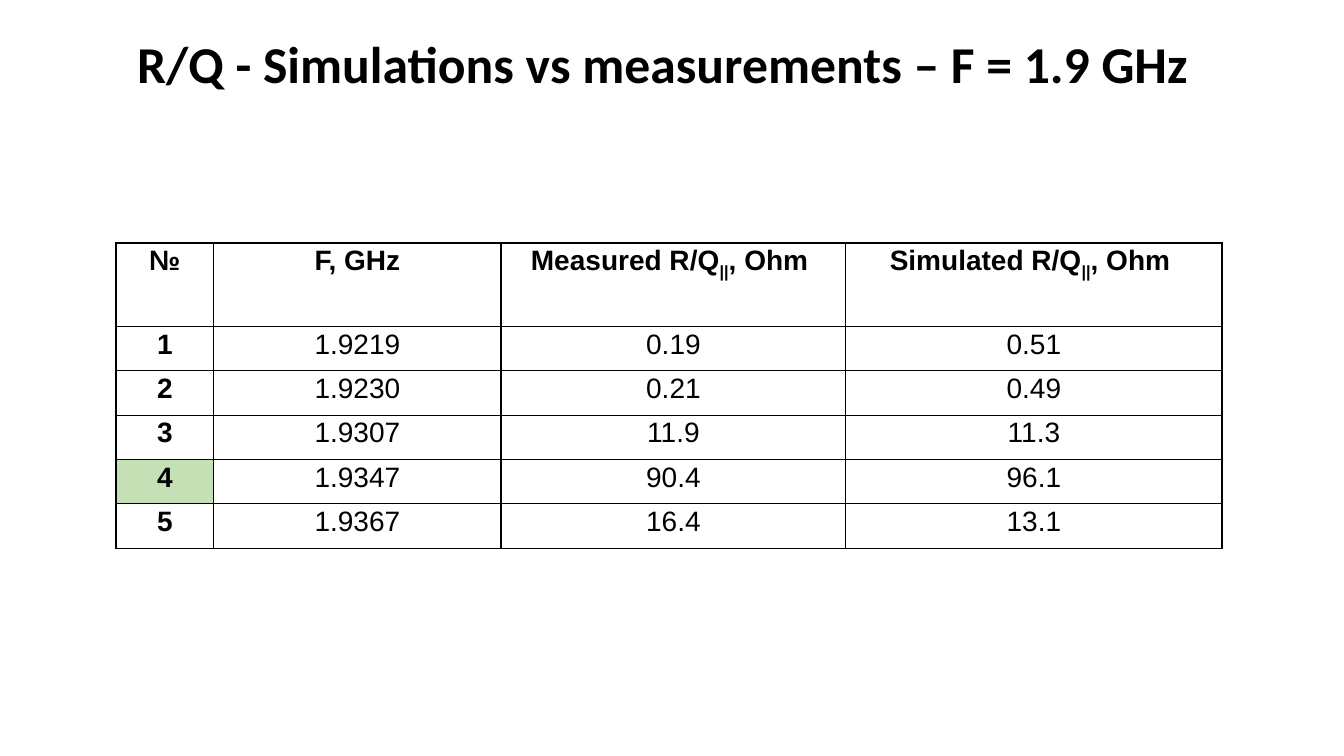
from lxml import etree
from pptx import Presentation
from pptx import util as u
from pptx.dml.color import RGBColor
from pptx.enum import text
from pptx.oxml import ns

BLACK = "000000"
GREEN = "C5E0B4"
COLUMN_WIDTHS = [0.97, 2.85, 3.42, 3.73]
HEADER_HEIGHT = 0.83
ROW_HEIGHT = 0.44
HEADERS = [
    ["№"],
    ["F, GHz"],
    ["Measured R/Q", "||", ", Ohm "],
    ["Simulated R/Q", "||", ", Ohm "],
]
MODES = [
    ["1", "1.9219", "0.19", "0.51"],
    ["2", "1.9230", "0.21", "0.49"],
    ["3", "1.9307", "11.9", "11.3"],
    ["4", "1.9347", "90.4", "96.1"],
    ["5", "1.9367", "16.4", "13.1"],
]
HIGHLIGHTED_MODE = "4"


def color(value):
    """Turn a hex string into a colour."""
    return RGBColor.from_string(value)


def add_span(para, words, font, size, bold):
    """Append one formatted run to a paragraph."""
    span = para.add_run()
    span.text = words
    span.font.name = font
    span.font.size = u.Pt(size)
    span.font.bold = bold
    span.font.color.rgb = color(BLACK)
    return span


def set_title(page, words):
    """Place and format the slide title."""
    box = page.shapes.title
    box.left, box.top = u.Inches(1.26), u.Inches(0.29)
    box.width, box.height = u.Inches(12.52), u.Inches(1.64)
    frame = box.text_frame
    frame.word_wrap = True
    frame.auto_size = text.MSO_AUTO_SIZE.NONE
    frame.vertical_anchor = text.MSO_ANCHOR.TOP
    frame.margin_top = u.Inches(0.19)
    para = frame.paragraphs[0]
    para.alignment = text.PP_ALIGN.LEFT
    para.line_spacing = 0.7
    add_span(para, words, "Calibri", 36.9, True)


def add_borders(cell):
    """Draw a thin black line on each side of a cell."""
    properties = cell._tc.get_or_add_tcPr()
    for side in ("a:lnL", "a:lnR", "a:lnT", "a:lnB"):
        line = etree.SubElement(properties, ns.qn(side), w=str(u.Pt(1)))
        fill = etree.SubElement(line, ns.qn("a:solidFill"))
        etree.SubElement(fill, ns.qn("a:srgbClr"), val=BLACK)


def fill_cell(cell, parts, bold, shade=None):
    """Write the runs of a cell, with the bars set as subscript."""
    cell.margin_left = cell.margin_right = u.Inches(0.07)
    cell.margin_top = cell.margin_bottom = 0
    para = cell.text_frame.paragraphs[0]
    para.alignment = text.PP_ALIGN.CENTER
    para.line_spacing = 1.07
    for part in parts:
        span = add_span(para, part, "Arial", 20, bold)
        if part == "||":
            span.font._element.set("baseline", "-25000")
    add_borders(cell)
    if shade:
        cell.fill.solid()
        cell.fill.fore_color.rgb = color(shade)
    else:
        cell.fill.background()


def add_mode_table(page):
    """Add the table of measured and simulated values."""
    height = HEADER_HEIGHT + ROW_HEIGHT * len(MODES)
    table = page.shapes.add_table(
        len(MODES) + 1, len(HEADERS), u.Inches(1.15), u.Inches(2.41),
        u.Inches(sum(COLUMN_WIDTHS)), u.Inches(height)).table
    table.first_row = table.horz_banding = False
    for column, width in zip(table.columns, COLUMN_WIDTHS):
        column.width = u.Inches(width)
    for index, row in enumerate(table.rows):
        row.height = u.Inches(ROW_HEIGHT if index else HEADER_HEIGHT)
    for index, parts in enumerate(HEADERS):
        fill_cell(table.cell(0, index), parts, True)
    for row, values in enumerate(MODES, start=1):
        for index, value in enumerate(values):
            marked = index == 0 and value == HIGHLIGHTED_MODE
            fill_cell(table.cell(row, index), [value], index == 0,
                      GREEN if marked else None)


def main():
    """Build the slide and save it."""
    deck = Presentation()
    deck.slide_width, deck.slide_height = u.Inches(13.33), u.Inches(7.5)
    page = deck.slides.add_slide(deck.slide_layouts[5])
    set_title(page, "R/Q - Simulations vs measurements – F = 1.9 GHz")
    add_mode_table(page)
    deck.save("out.pptx")


if __name__ == "__main__":
    main()
